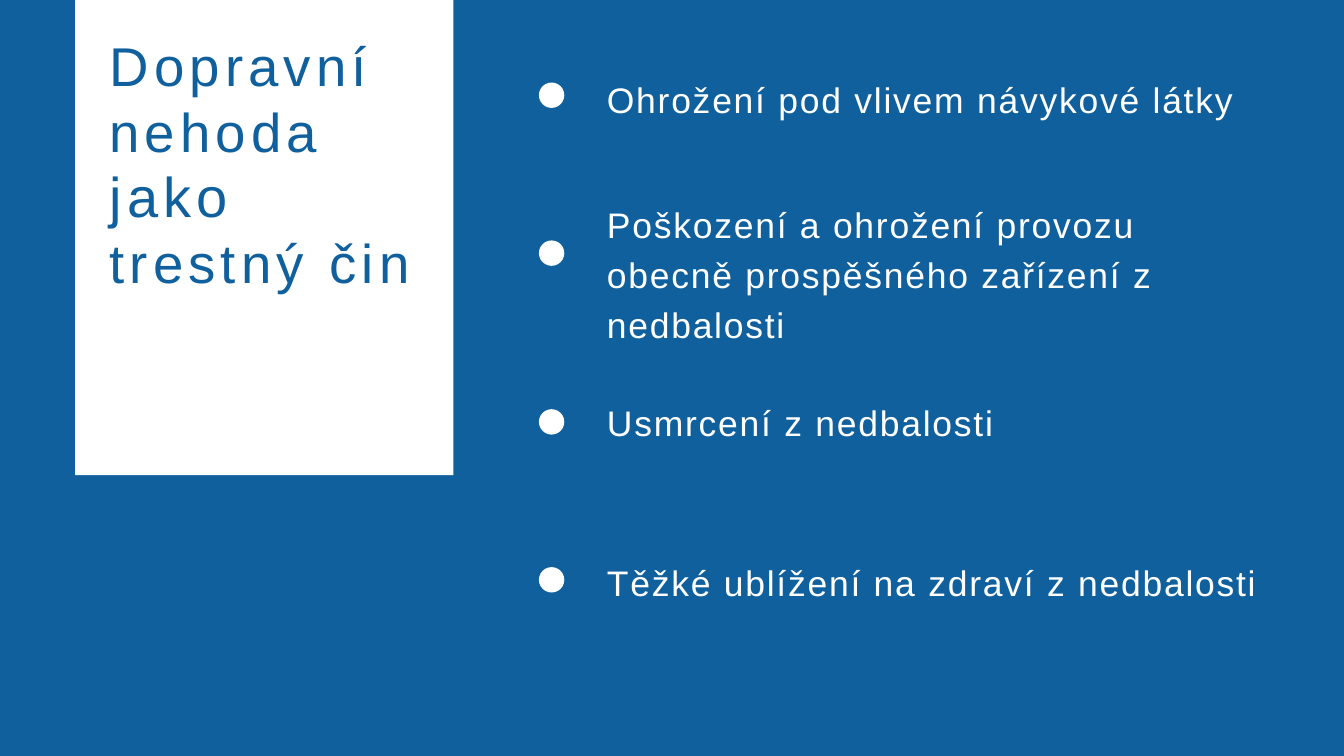
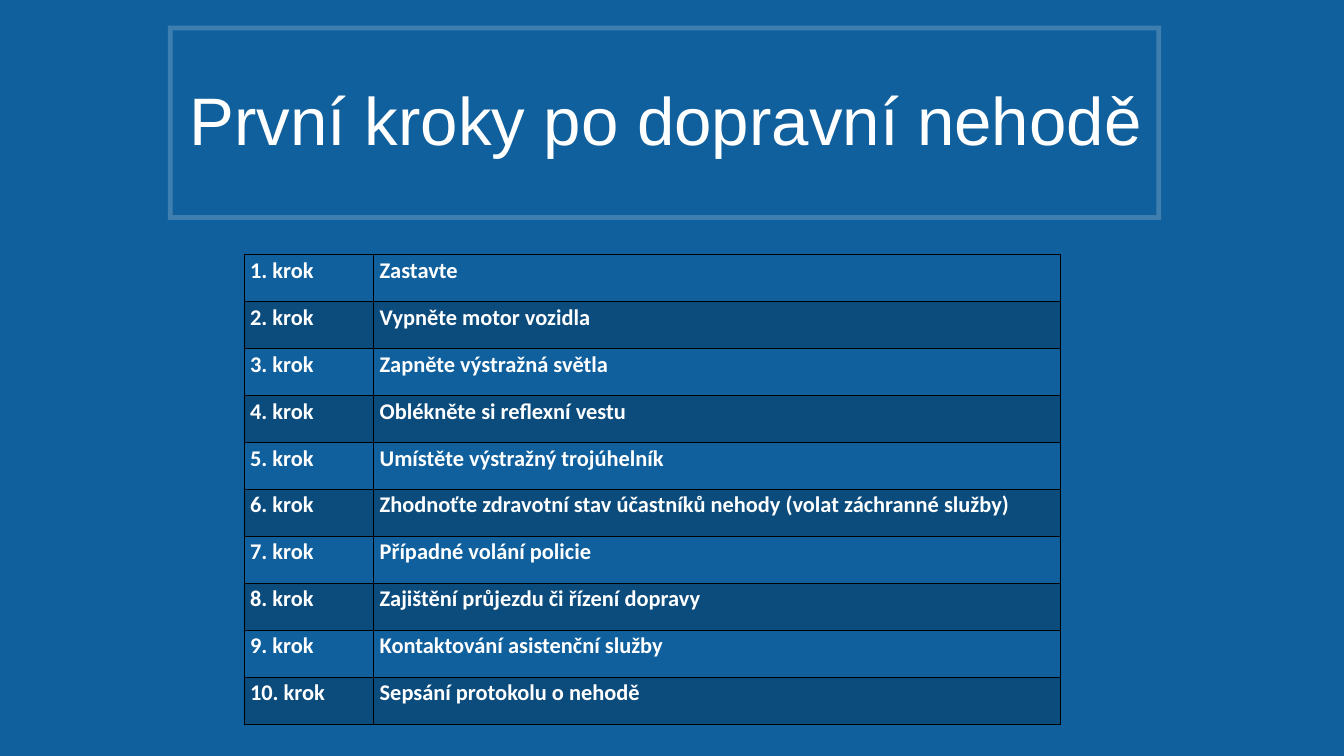
from dataclasses import dataclass

from lxml.etree import SubElement
from pptx import Presentation
from pptx.dml.color import RGBColor
from pptx.enum.shapes import MSO_SHAPE as Preset
from pptx.enum.text import MSO_ANCHOR as Anchor, MSO_AUTO_SIZE as AutoSize, PP_ALIGN as Align
from pptx.oxml.ns import qn
from pptx.util import Cm, Pt


@dataclass(frozen=True)
class Theme:
    blue: str = "10609D"
    white: str = "FFFFFF"
    black: str = "000000"
    veil: int = 20
    font: str = "Arial"
    table_font: str = "Calibri"
    side_title: float = 58.5
    side_title_large: float = 60
    heading: float = 72
    point: float = 38
    cell: float = 24
    border: float = 1


@dataclass(frozen=True)
class Box:
    """A region in centimetres."""
    left: float
    top: float
    width: float
    height: float

    def inner(self, left, top, width, height):
        return Box(self.left + left, self.top + top, width, height)

    def lengths(self):
        return [Cm(side) for side in (self.left, self.top, self.width, self.height)]


THEME = Theme()

OFFENCES = [  # dot offset, text offset, text height, wording
    (0.43, 0, 1.8, "Ohrožení pod vlivem návykové látky"),
    (6.4, 4.73, 3.71, "Poškození a ohrožení provozu obecně prospěšného zařízení z nedbalosti"),
    (12.78, 12.19, 1.8, "Usmrcení z nedbalosti"),
    (18.75, 18.27, 1.8, "Těžké ublížení na zdraví z nedbalosti"),
]

STEPS = [
    "Zastavte",
    "Vypněte motor vozidla",
    "Zapněte výstražná světla",
    "Oblékněte si reflexní vestu",
    "Umístěte výstražný trojúhelník",
    "Zhodnoťte zdravotní stav účastníků nehody (volat záchranné služby)",
    "Případné volání policie",
    "Zajištění průjezdu či řízení dopravy",
    "Kontaktování asistenční služby",
    "Sepsání protokolu o nehodě",
]


def paint(fill, color):
    fill.solid()
    fill.fore_color.rgb = RGBColor.from_string(color)


def fade(properties, percent):
    """Make the solid fill held by a properties element partly transparent."""
    color = properties.find(f"{qn('a:solidFill')}/{qn('a:srgbClr')}")
    SubElement(color, qn("a:alpha"), val=str(percent * 1000))


def style_shape(shape, color):
    shape.shadow.inherit = False
    paint(shape.fill, color)
    shape.line.fill.background()
    return shape


def write(frame, text, *, size, color=THEME.white, font=THEME.font, bold=False,
          tracking=0, leading=None, space=0, indent=0):
    """Fill a text frame; text is a string or a list of (string, size) spans."""
    para = frame.paragraphs[0]
    para.alignment = Align.LEFT
    para.space_before = para.space_after = Pt(space)
    if leading:
        para.line_spacing = Pt(leading)
    if indent:
        properties = para._p.get_or_add_pPr()
        properties.set("marL", str(Cm(indent)))
        properties.set("indent", "0")
    for words, span_size in [(text, size)] if isinstance(text, str) else text:
        span = para.add_run()
        span.text = words
        span.font.name = font
        span.font.size = Pt(span_size)
        span.font.bold = bold
        span.font.color.rgb = RGBColor.from_string(color)
        if tracking:
            span.font._rPr.set("spc", str(round(tracking * 100)))


def fit_frame(shape, *, wrap=True, inset_x=0, inset_y=0):
    frame = shape.text_frame
    frame.word_wrap = wrap
    frame.auto_size = AutoSize.SHAPE_TO_FIT_TEXT
    frame.vertical_anchor = Anchor.TOP
    frame.margin_left = frame.margin_right = Cm(inset_x)
    frame.margin_top = frame.margin_bottom = Cm(inset_y)
    return frame


def place_title(page, box):
    title = page.shapes.title
    title.left, title.top, title.width, title.height = box.lengths()
    return title


def add_title_panel(page, box):
    panel = style_shape(page.shapes.add_shape(Preset.RECTANGLE, *box.lengths()), THEME.white)
    title = place_title(page, box.inner(1.3, 2.24, 12.17, 9.98))
    title.element.addprevious(panel.element)
    small, large = THEME.side_title, THEME.side_title_large
    spans = [("Dopravní nehoda ", small), ("jako", large), (" trestný čin", small)]
    write(fit_frame(title), spans, size=small, color=THEME.blue, tracking=5.5, leading=70.2)


def add_offences(page, box):
    dot_size, text_left = 0.96, 2.57
    for dot_top, text_top, height, words in OFFENCES:
        dot = box.inner(0, dot_top, dot_size, dot_size)
        style_shape(page.shapes.add_shape(Preset.OVAL, *dot.lengths()), THEME.white)
        place = box.inner(text_left, text_top, box.width - text_left, height)
        frame = fit_frame(page.shapes.add_textbox(*place.lengths()))
        write(frame, words, size=THEME.point, tracking=1.9, leading=53.2)


def add_framed_title(page, box):
    title = place_title(page, box.inner(0.56, 1.87, 37.01, 3.33))
    frame = fit_frame(title, wrap=False, inset_x=0.25, inset_y=0.13)
    write(frame, "První kroky po dopravní nehodě", size=THEME.heading)

    band = 0.18
    left, top, width, height = box.lengths()
    right, bottom = left + width, top + height
    edge = Cm(band)
    builder = page.shapes.build_freeform(left, top)
    builder.add_line_segments([(left, bottom), (right, bottom), (right, top)])
    builder.move_to(right - edge, bottom - edge)
    builder.add_line_segments([(left + edge, bottom - edge), (left + edge, top + edge),
                               (right - edge, top + edge)])
    outline = style_shape(builder.convert_to_shape(), THEME.white)
    fade(outline.element.spPr, THEME.veil)


def add_borders(properties):
    for side in ("lnL", "lnR", "lnT", "lnB"):
        line = SubElement(properties, qn(f"a:{side}"), w=str(Pt(THEME.border)))
        fill = SubElement(line, qn("a:solidFill"))
        SubElement(fill, qn("a:srgbClr"), val=THEME.black)


def fill_cell(cell, words, shaded):
    cell.vertical_anchor = Anchor.MIDDLE
    cell.margin_left = cell.margin_right = Cm(0.13)
    cell.margin_top = cell.margin_bottom = 0
    properties = cell._tc.get_or_add_tcPr()
    add_borders(properties)
    if shaded:
        paint(cell.fill, THEME.black)
        fade(properties, THEME.veil)
    else:
        cell.fill.background()
    write(cell.text_frame, words, size=THEME.cell, font=THEME.table_font, bold=True,
          leading=13, space=3, indent=0.1)


def add_steps_table(page, box):
    label_width = 4.9
    table = page.shapes.add_table(len(STEPS), 2, *box.lengths()).table
    table.first_row = table.horz_banding = False
    table.columns[0].width = Cm(label_width)
    table.columns[1].width = Cm(box.width - label_width)
    for index, step in enumerate(STEPS):
        for column, words in enumerate((f"{index + 1}. krok", step)):
            fill_cell(table.cell(index, column), words, shaded=index % 2 == 1)


def build_offences_page(page):
    add_title_panel(page, Box(2.84, -1.02, 14.3, 18.98))
    add_offences(page, Box(20.37, 2.69, 27.56, 20.07))


def build_steps_page(page):
    add_framed_title(page, Box(6.35, 0.97, 37.54, 7.34))
    add_steps_table(page, Box(9.22, 9.63, 30.88, 17.75))


def main():
    deck = Presentation()
    deck.slide_width, deck.slide_height = Cm(50.8), Cm(28.58)
    paint(deck.slide_master.background.fill, THEME.blue)
    title_only = deck.slide_layouts.get_by_name("Title Only")
    for build in (build_offences_page, build_steps_page):
        build(deck.slides.add_slide(title_only))
    deck.save("out.pptx")


if __name__ == "__main__":
    main()
